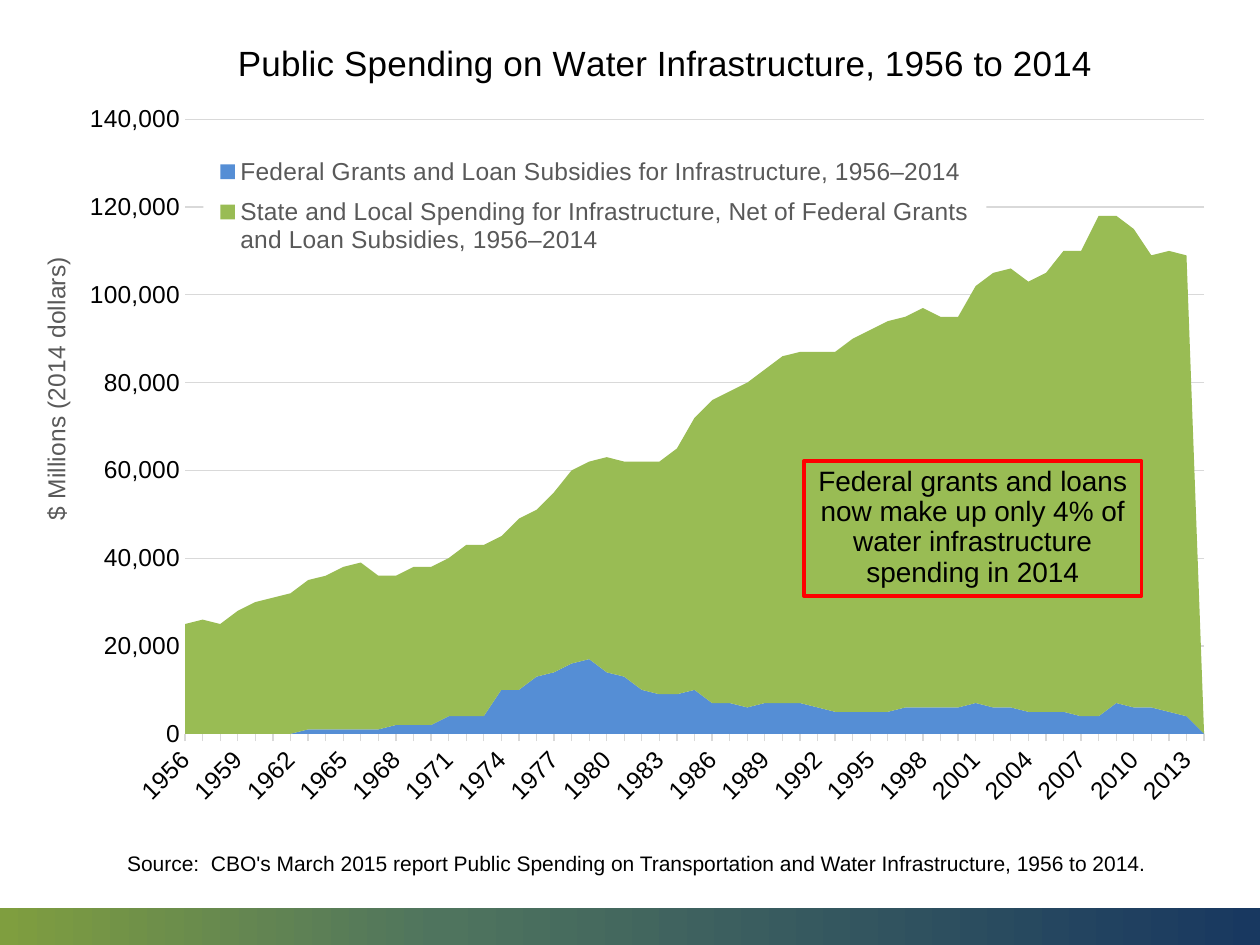
from copy import deepcopy
from dataclasses import dataclass

from lxml import etree
from pptx import Presentation
from pptx.chart.data import CategoryChartData
from pptx.dml.color import RGBColor as RGB
from pptx.enum.chart import XL_CHART_TYPE as ChartType
from pptx.enum.chart import XL_LEGEND_POSITION as LegendPosition
from pptx.enum.chart import XL_TICK_MARK as TickMark
from pptx.enum.shapes import MSO_SHAPE as Preset
from pptx.enum.text import MSO_ANCHOR as Anchor
from pptx.enum.text import PP_ALIGN as Align
from pptx.oxml.ns import qn
from pptx.util import Inches, Pt


@dataclass(frozen=True)
class Theme:
    font: str = "Arial"
    ink: str = "000000"
    muted: str = "595959"
    grid: str = "D9D9D9"
    white: str = "FFFFFF"
    alert: str = "FF0000"
    band: tuple = ((0, "7F9E3F"), (0.35, "4F745E"), (1, "183860"))
    title_size: int = 20
    callout_size: int = 16
    label_size: int = 14
    source_size: int = 12


@dataclass(frozen=True)
class Spending:
    name: str
    color: str
    thousands: tuple  # millions of dollars, in thousands


@dataclass(frozen=True)
class Layout:
    x: float
    y: float
    w: float | None = None
    h: float | None = None


THEME = Theme()
YEARS = range(1956, 2015)
SPENDING = (
    Spending(
        "Federal Grants and Loan Subsidies for Infrastructure, 1956–2014", "558ED5",
        (0, 0, 0, 0, 0, 0, 0, 1, 1, 1, 1, 1, 2, 2, 2, 4, 4, 4, 10, 10,
         13, 14, 16, 17, 14, 13, 10, 9, 9, 10, 7, 7, 6, 7, 7, 7, 6, 5, 5, 5,
         5, 6, 6, 6, 6, 7, 6, 6, 5, 5, 5, 4, 4, 7, 6, 6, 5, 4)),
    Spending(
        "State and Local Spending for Infrastructure, Net of Federal Grants "
        "and Loan Subsidies, 1956–2014", "99BC54",
        (25, 26, 25, 28, 30, 31, 32, 34, 35, 37, 38, 35, 34, 36, 36, 36, 39, 39, 35, 39,
         38, 41, 44, 45, 49, 49, 52, 53, 56, 62, 69, 71, 74, 76, 79, 80, 81, 82, 85, 87,
         89, 89, 91, 89, 89, 95, 99, 100, 98, 100, 105, 106, 114, 111, 109, 103, 105, 105)),
)


def style_font(font, size: int, color: str) -> None:
    font.name = THEME.font
    font.size = Pt(size)
    font.bold = False
    font.color.rgb = RGB.from_string(color)


def style_line(line, color: str, width: float) -> None:
    line.color.rgb = RGB.from_string(color)
    line.width = Pt(width)


def place(element, spot: Layout, inner: bool = False) -> None:
    """Give a chart part a manual layout, in fractions of the chart."""
    layout = element.find(qn("c:layout"))
    if layout is None:
        layout = etree.Element(qn("c:layout"))
        element.find(qn("c:overlay")).addprevious(layout)
    for child in list(layout):
        layout.remove(child)
    manual = etree.SubElement(layout, qn("c:manualLayout"))
    entries = [("layoutTarget", "inner")] if inner else []
    entries += [("xMode", "edge"), ("yMode", "edge")]
    entries += [(key, getattr(spot, key)) for key in "xywh"
                if getattr(spot, key) is not None]
    for tag, value in entries:
        etree.SubElement(manual, qn(f"c:{tag}")).set("val", str(value))


def write_title(title, text: str, size: int, color: str, spot: Layout) -> None:
    title.text_frame.text = text
    style_font(title.text_frame.paragraphs[0].font, size, color)
    place(title._element, spot)


def add_band(slide) -> None:
    band = slide.shapes.add_shape(
        Preset.RECTANGLE, 0, Inches(7.21), Inches(10), Inches(0.3))
    band.shadow.inherit = False
    band.line.fill.background()
    band.fill.gradient()
    band.fill.gradient_angle = 0
    last_stop = band._element.spPr.findall(".//" + qn("a:gs"))[-1]
    last_stop.addprevious(deepcopy(last_stop))
    for stop, (position, color) in zip(band.fill.gradient_stops, THEME.band):
        stop.position = position
        stop.color.rgb = RGB.from_string(color)


def add_spending_chart(slide) -> None:
    data = CategoryChartData(number_format="#,##0")
    data.categories = [str(year) for year in YEARS]
    for spending in SPENDING:
        values = [1000 * value for value in spending.thousands]
        data.add_series(spending.name, values + [None] * (len(YEARS) - len(values)))
    chart = slide.shapes.add_chart(
        ChartType.AREA_STACKED, Inches(0.09), Inches(0.21),
        Inches(9.71), Inches(6.41), data).chart
    style_font(chart.font, 10, THEME.ink)
    for series, spending in zip(chart.plots[0].series, SPENDING):
        series.format.fill.solid()
        series.format.fill.fore_color.rgb = RGB.from_string(spending.color)
    place(chart._chartSpace.chart.plotArea, Layout(0.142, 0.115, 0.833, 0.761), inner=True)

    # Titles
    write_title(chart.chart_title, "Public Spending on Water Infrastructure, 1956 to 2014",
                THEME.title_size, THEME.ink, Layout(0.18, 0.01))
    chart.chart_title._element.find(qn("c:overlay")).set("val", "1")
    amounts = chart.value_axis
    write_title(amounts.axis_title, "$ Millions (2014 dollars)",
                THEME.label_size, THEME.muted, Layout(0.02, 0.28))

    # Value axis
    amounts.minimum_scale, amounts.maximum_scale = 0, 140000
    amounts.major_unit = 20000
    amounts.major_tick_mark = amounts.minor_tick_mark = TickMark.NONE
    amounts.tick_labels.number_format = "#,##0"
    amounts.tick_labels.number_format_is_linked = False
    amounts.format.line.fill.background()
    amounts.has_major_gridlines = True
    style_line(amounts.major_gridlines.format.line, THEME.grid, 0.75)
    amounts._element.find(qn("c:crossBetween")).set("val", "midCat")

    # Year axis, every third year labelled at a slant
    years = chart.category_axis
    years.has_major_gridlines = False
    years.major_tick_mark, years.minor_tick_mark = TickMark.OUTSIDE, TickMark.NONE
    style_line(years.format.line, THEME.grid, 0.75)
    for axis in (amounts, years):
        style_font(axis.tick_labels.font, THEME.label_size, THEME.ink)
    years._element.txPr.find(qn("a:bodyPr")).set("rot", "-2700000")
    skip = etree.Element(qn("c:tickLblSkip"))
    skip.set("val", "3")
    years._element.find(qn("c:noMultiLvlLbl")).addprevious(skip)

    # Legend, on white above the areas
    chart.has_legend = True
    legend = chart.legend
    legend.position = LegendPosition.TOP
    legend.include_in_layout = False
    style_font(legend.font, THEME.label_size, THEME.muted)
    place(legend._element, Layout(0.157, 0.147, 0.64, 0.15))
    backdrop = etree.Element(qn("c:spPr"))
    solid = etree.SubElement(backdrop, qn("a:solidFill"))
    etree.SubElement(solid, qn("a:srgbClr")).set("val", THEME.white)
    legend._element.find(qn("c:overlay")).addnext(backdrop)


def add_callout(slide) -> None:
    callout = slide.shapes.add_shape(
        Preset.RECTANGLE, Inches(6.38), Inches(3.66), Inches(2.68), Inches(1.07))
    callout.shadow.inherit = False
    callout.fill.background()
    style_line(callout.line, THEME.alert, 2)
    frame = callout.text_frame
    frame.word_wrap = True
    frame.vertical_anchor = Anchor.TOP
    message = frame.paragraphs[0]
    message.text = ("Federal grants and loans now make up only 4% of "
                    "water infrastructure spending in 2014")
    message.alignment = Align.CENTER
    message.line_spacing = 0.9
    message.space_after = Pt(6)
    style_font(message.font, THEME.callout_size, THEME.ink)


def add_source(slide) -> None:
    frame = slide.shapes.add_textbox(
        Inches(0.91), Inches(6.7), Inches(8.31), Inches(0.3)).text_frame
    frame.word_wrap = True
    source = frame.paragraphs[0]
    source.text = ("Source:  CBO's March 2015 report Public Spending on "
                   "Transportation and Water Infrastructure, 1956 to 2014.")
    style_font(source.font, THEME.source_size, THEME.ink)


def main() -> None:
    deck = Presentation()
    deck.slide_width, deck.slide_height = Inches(10), Inches(7.5)
    slide = deck.slides.add_slide(deck.slide_layouts[6])
    add_band(slide)
    add_spending_chart(slide)
    add_callout(slide)
    add_source(slide)
    deck.save("out.pptx")


if __name__ == "__main__":
    main()
